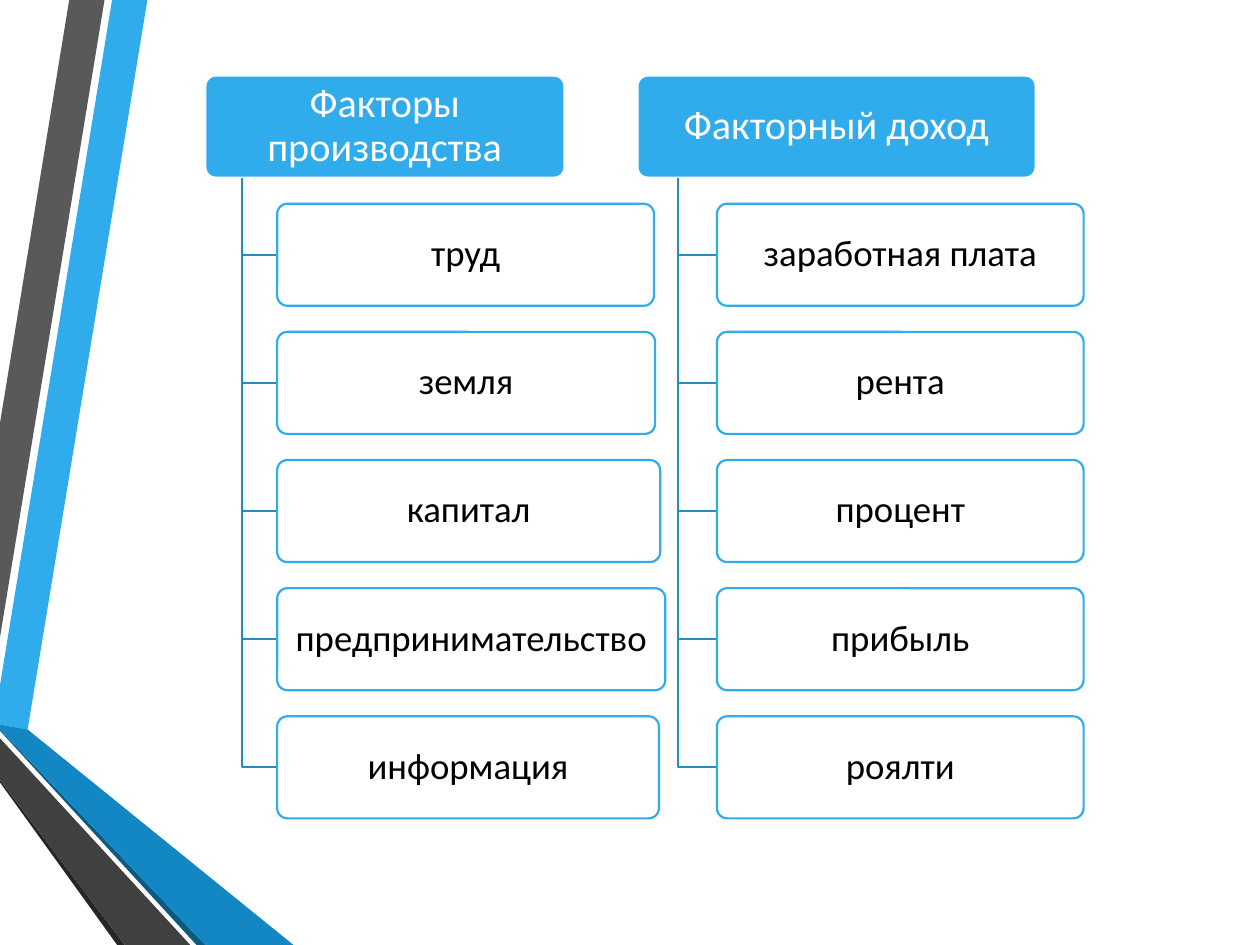
from pptx import Presentation
from pptx.dml.color import RGBColor
from pptx.enum.shapes import MSO_SHAPE
from pptx.enum.text import MSO_ANCHOR, PP_ALIGN
from pptx.util import Inches, Pt

ROUNDED = MSO_SHAPE.ROUNDED_RECTANGLE
MIDDLE = MSO_ANCHOR.MIDDLE
CENTER = PP_ALIGN.CENTER
COLORS = {
    "blue": "30ACEC", "deep_blue": "1287C3", "navy": "0C5A82",
    "gray": "595959", "dark_gray": "404040", "charcoal": "262626",
    "branch": "268ABD", "white": "FFFFFF", "black": "000000",
}
BOX_HEIGHT = 0.81
HEADER_TOP = 0.6
ROW_STEP = 1.017

RIBBONS = [
    ("blue", [(0, 5.44), (0, 5.75), (0.22, 5.79), (1.17, 0), (0.89, 0)]),
    ("gray", [(0.83, 0), (0.55, 0), (0, 3.36), (0, 5.06)]),
    ("charcoal", [(0, 6.19), (0, 6.21), (0.93, 7.5), (0.99, 7.5)]),
    ("navy", [(0, 5.79), (0, 5.8), (1.56, 7.5), (1.63, 7.5)]),
    ("deep_blue", [(0, 5.79), (1.63, 7.5), (2.33, 7.5), (0.22, 5.79), (0, 5.75)]),
    ("dark_gray", [(0, 6.19), (0.99, 7.5), (1.51, 7.5), (0, 5.86)]),
]

COLUMNS = [
    {"header": "Факторы производства", "left": 1.63, "width": 2.85,
     "trunk": 1.92, "item_left": 2.2,
     "items": [("труд", 2.99), ("земля", 3), ("капитал", 3.04),
               ("предпринимательство", 3.08), ("информация", 3.03)]},
    {"header": "Факторный доход", "left": 5.06, "width": 3.16,
     "trunk": 5.38, "item_left": 5.69,
     "items": [("заработная плата", 2.91), ("рента", 2.91), ("процент", 2.91),
               ("прибыль", 2.91), ("роялти", 2.91)]},
]

deck = Presentation()
deck.slide_width = Inches(10)
deck.slide_height = Inches(7.5)
page = deck.slides.add_slide(deck.slide_layouts[6])


def add_outline(points, close):
    builder = page.shapes.build_freeform(
        Inches(points[0][0]), Inches(points[0][1]))
    builder.add_line_segments(
        [(Inches(x), Inches(y)) for x, y in points[1:]], close=close)
    outline = builder.convert_to_shape()
    outline.shadow.inherit = False
    return outline


def add_box(text, left, top, width, size, fill, line, color):
    box = page.shapes.add_shape(
        ROUNDED, Inches(left), Inches(top), Inches(width), Inches(BOX_HEIGHT))
    box.adjustments[0] = 0.1
    box.shadow.inherit = False
    box.fill.solid()
    box.fill.fore_color.rgb = RGBColor.from_string(COLORS[fill])
    box.line.color.rgb = RGBColor.from_string(COLORS[line])
    box.line.width = Pt(1.25)
    frame = box.text_frame
    frame.word_wrap = True
    frame.vertical_anchor = MIDDLE
    frame.margin_left = frame.margin_right = Inches(0.07)
    frame.margin_top = frame.margin_bottom = Inches(0.05)
    frame.text = text
    para = frame.paragraphs[0]
    para.alignment = CENTER
    para.line_spacing = 0.9
    span = para.runs[0]
    span.font.name = "Calibri"
    span.font.size = Pt(size)
    span.font.color.rgb = RGBColor.from_string(COLORS[color])


for color, points in RIBBONS:
    ribbon = add_outline(points, True)
    ribbon.fill.solid()
    ribbon.fill.fore_color.rgb = RGBColor.from_string(COLORS[color])
    ribbon.line.fill.background()

for column in COLUMNS:
    add_box(column["header"], column["left"], HEADER_TOP, column["width"],
            23, "blue", "white", "white")
    for row, (text, width) in enumerate(column["items"], start=1):
        top = HEADER_TOP + row * ROW_STEP
        center = top + BOX_HEIGHT / 2
        branch = add_outline(
            [(column["trunk"], HEADER_TOP + BOX_HEIGHT),
             (column["trunk"], center), (column["item_left"], center)], False)
        branch.fill.background()
        branch.line.color.rgb = RGBColor.from_string(COLORS["branch"])
        branch.line.width = Pt(1.25)
        add_box(text, column["item_left"], top, width,
                21, "white", "blue", "black")

deck.save("out.pptx")
